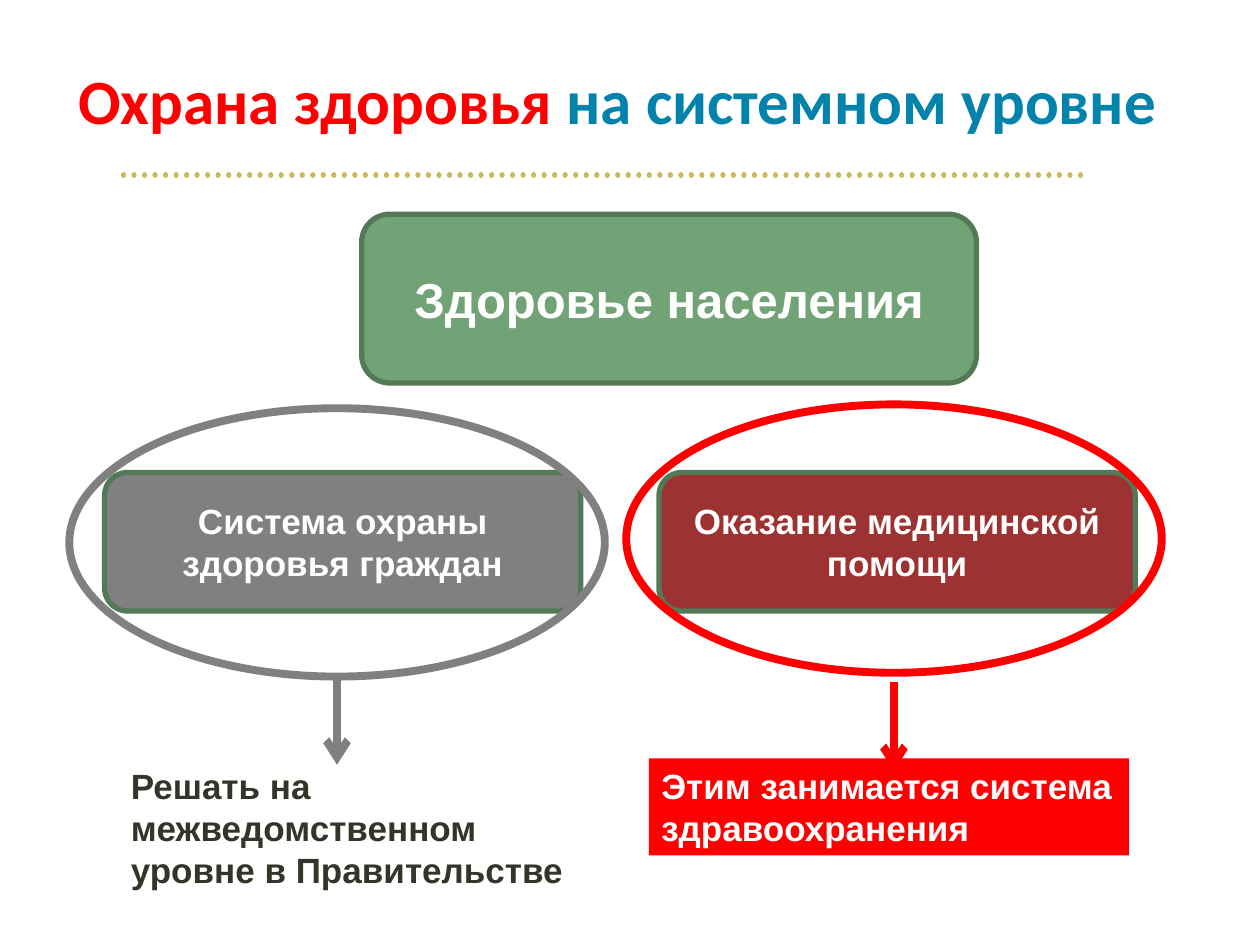
"""Builds a slide on health protection at the system level."""
from lxml.etree import SubElement
from pptx import Presentation
from pptx.dml.color import RGBColor
from pptx.enum.dml import MSO_LINE as Dash
from pptx.enum.shapes import MSO_CONNECTOR as Link, MSO_SHAPE as Kind
from pptx.enum.text import MSO_ANCHOR as Anchor, MSO_AUTO_SIZE as Fit, PP_ALIGN as Align
from pptx.oxml.ns import qn
from pptx.util import Inches, Pt

RED, GREY, GREEN, WHITE = "FF0000", "808080", "547957", "FFFFFF"
TITLE = [("Охрана здоровья ", RED), ("на системном уровне", "0183AB")]
CARDS = [
    ("Здоровье населения", (2.87, 1.7, 4.88, 1.34), "72A376", 28),
    ("Система охраны здоровья граждан", (0.83, 3.75, 3.78, 1.1), GREY, 20),
    ("Оказание медицинской помощи", (5.23, 3.75, 3.78, 1.1), "9D3232", 20),
]
NOTES = [
    ("Этим занимается система здравоохранения", (5.15, 6.02, 3.81, 0.77), RED, WHITE),
    ("Решать на межведомственном уровне в Правительстве", (0.94, 6.02, 3.86, 1.11), None, "34352A"),
]
RINGS = [((0.55, 3.24), 5.36, GREY), ((4.97, 3.21), 5.41, RED)]
RING_W, RING_H, ARROW_H = 4.25, 2.13, 0.71


def color(part, code):
    part.rgb = RGBColor.from_string(code)


def write(para, text, size, code, font="Arial"):
    run = para.add_run()
    run.text = text
    run.font.name, run.font.size, run.font.bold = font, Pt(size), True
    color(run.font.color, code)


def add_form(shapes, kind, place, fill=None, edge=None, width=3):
    form = shapes.add_shape(kind, *map(Inches, place))
    form.shadow.inherit = False
    for part, code in ((form.fill, fill), (form.line.fill, edge)):
        if code:
            part.solid()
            color(part.fore_color, code)
        else:
            part.background()
    if edge:
        form.line.width = Pt(width)
    return form


def add_line(shapes, start, end, code, width):
    line = shapes.add_connector(Link.STRAIGHT, *map(Inches, start + end))
    color(line.line.color, code)
    line.line.width = Pt(width)
    SubElement(line._element.spPr, qn("a:effectLst"))
    return line


def add_title(slide):
    title = slide.shapes.title
    title.left, title.top, title.width, title.height = map(Inches, (0.18, 0.13, 9.64, 1.02))
    frame = title.text_frame
    frame.auto_size, frame.vertical_anchor = Fit.NONE, Anchor.BOTTOM
    frame.margin_left = frame.margin_top = frame.margin_bottom = Inches(0.05)
    frame.margin_right = Inches(0.25)
    para = frame.paragraphs[0]
    para.alignment, para.line_spacing = Align.CENTER, 0.9
    for text, code in TITLE:
        write(para, text, 36, code, "Calibri")


def main():
    deck = Presentation()
    deck.slide_width, deck.slide_height = Inches(10), Inches(7.5)
    slide = deck.slides.add_slide(deck.slide_layouts[5])
    shapes = slide.shapes
    add_title(slide)

    rule = add_line(shapes, (0.98, 1.39), (8.62, 1.39), "CBBA55", 3)
    rule.line.dash_style = Dash.ROUND_DOT
    rule.line._ln.set("cap", "rnd")

    for text, place, fill, size in CARDS:
        frame = add_form(shapes, Kind.ROUNDED_RECTANGLE, place, fill, GREEN).text_frame
        frame.word_wrap, frame.vertical_anchor = True, Anchor.MIDDLE
        para = frame.paragraphs[0]
        para.alignment = Align.CENTER
        write(para, text, size, WHITE)

    for (left, top), start, code in RINGS:
        add_form(shapes, Kind.OVAL, (left, top, RING_W, RING_H), edge=code, width=4.5)
        mid = left + RING_W / 2
        arrow = add_line(shapes, (mid, start), (mid, start + ARROW_H), code, 4.5)
        SubElement(arrow.line._ln, qn("a:tailEnd"), type="arrow")

    for text, place, fill, code in NOTES:
        box = shapes.add_textbox(*map(Inches, place))
        if fill:
            box.fill.solid()
            color(box.fill.fore_color, fill)
        frame = box.text_frame
        frame.word_wrap, frame.auto_size = True, Fit.SHAPE_TO_FIT_TEXT
        write(frame.paragraphs[0], text, 20, code)

    deck.save("out.pptx")


if __name__ == "__main__":
    main()
